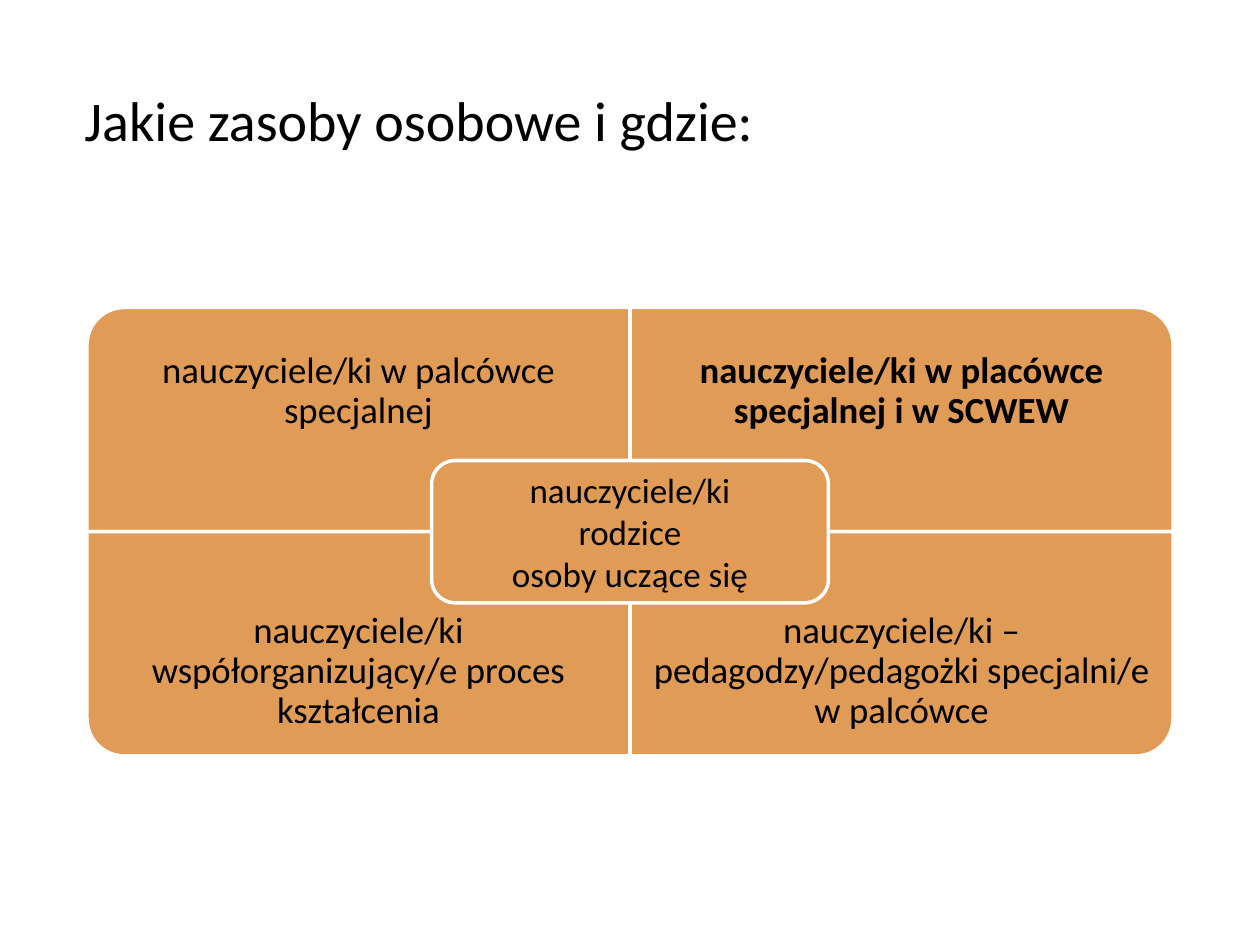
import pptx
from dataclasses import dataclass
from pptx.dml.color import RGBColor
from pptx.enum.shapes import MSO_SHAPE
from pptx.enum.text import MSO_ANCHOR, PP_ALIGN
from pptx.util import Inches, Pt


@dataclass(frozen=True)
class Theme:
    font: str = "Calibri"
    text: RGBColor = RGBColor(0, 0, 0)
    panel: RGBColor = RGBColor(0xE0, 0x9B, 0x56)
    border: RGBColor = RGBColor(255, 255, 255)
    border_width: int = Pt(2)
    title_size: int = Pt(32)
    panel_size: int = Pt(21)
    center_size: int = Pt(20)


theme = Theme()


def add_panel(page, preset, left, top, width, height):
    panel = page.shapes.add_shape(
        preset, Inches(left), Inches(top), Inches(width), Inches(height))
    panel.shadow.inherit = False
    panel.fill.solid()
    panel.fill.fore_color.rgb = theme.panel
    panel.line.color.rgb = theme.border
    panel.line.width = theme.border_width
    return panel


def write_text(box, lines, size, insets, align=PP_ALIGN.CENTER, spacing=1.0, bold=False):
    """Fill a box with one paragraph per line; insets are left, top, right, bottom."""
    frame = box.text_frame
    frame.word_wrap = True
    frame.vertical_anchor = MSO_ANCHOR.MIDDLE
    (frame.margin_left, frame.margin_top,
     frame.margin_right, frame.margin_bottom) = [Inches(inset) for inset in insets]
    for index, line in enumerate(lines):
        para = frame.add_paragraph() if index else frame.paragraphs[0]
        para.alignment = align
        para.line_spacing = spacing
        span = para.add_run()
        span.text = line
        span.font.name = theme.font
        span.font.size = size
        span.font.bold = bold
        span.font.color.rgb = theme.text


deck = pptx.Presentation()
deck.slide_width = Inches(10)
deck.slide_height = Inches(7.5)
page = deck.slides.add_slide(deck.slide_layouts[6])

title = page.shapes.add_textbox(Inches(0.5), Inches(0.3), Inches(9), Inches(1.25))
write_text(title, ["Jakie zasoby osobowe i gdzie:"], theme.title_size,
           (0.17, 0.1, 0, 0), align=PP_ALIGN.LEFT, spacing=0.9)

# Four panels meet at the middle; each is turned so its round corner points outwards.
middle_x, middle_y = 5, 4.22
panel_width, panel_height = 4.31, 1.78
label_height = 1.34
quadrants = [
    # column, row, rotation, bold, label
    (0, 0, 270, False, "nauczyciele/ki w palcówce specjalnej"),
    (1, 0, 0, True, "nauczyciele/ki w placówce specjalnej i w SCWEW"),
    (0, 1, 180, False, "nauczyciele/ki współorganizujący/e proces kształcenia"),
    (1, 1, 90, False, "nauczyciele/ki – pedagodzy/pedagożki specjalni/e w palcówce"),
]
for column, row, rotation, bold, label in quadrants:
    left = middle_x + (column - 1) * panel_width
    top = middle_y + (row - 1) * panel_height
    width, height = panel_width, panel_height
    if rotation % 180:
        width, height = height, width
    panel = add_panel(page, MSO_SHAPE.ROUND_1_RECTANGLE,
                      left + (panel_width - width) / 2,
                      top + (panel_height - height) / 2, width, height)
    panel.rotation = rotation

    label_top = top + row * (panel_height - label_height)
    box = page.shapes.add_textbox(Inches(left), Inches(label_top),
                                  Inches(panel_width), Inches(label_height))
    write_text(box, [label], theme.panel_size, [0.16] * 4, spacing=0.9, bold=bold)

center_width, center_height = 3.15, 1.13
center = add_panel(page, MSO_SHAPE.ROUNDED_RECTANGLE,
                   middle_x - center_width / 2, middle_y - center_height / 2,
                   center_width, center_height)
write_text(center, ["nauczyciele/ki", "rodzice", "osoby uczące się"],
           theme.center_size, [0.08] * 4)

deck.save("out.pptx")
